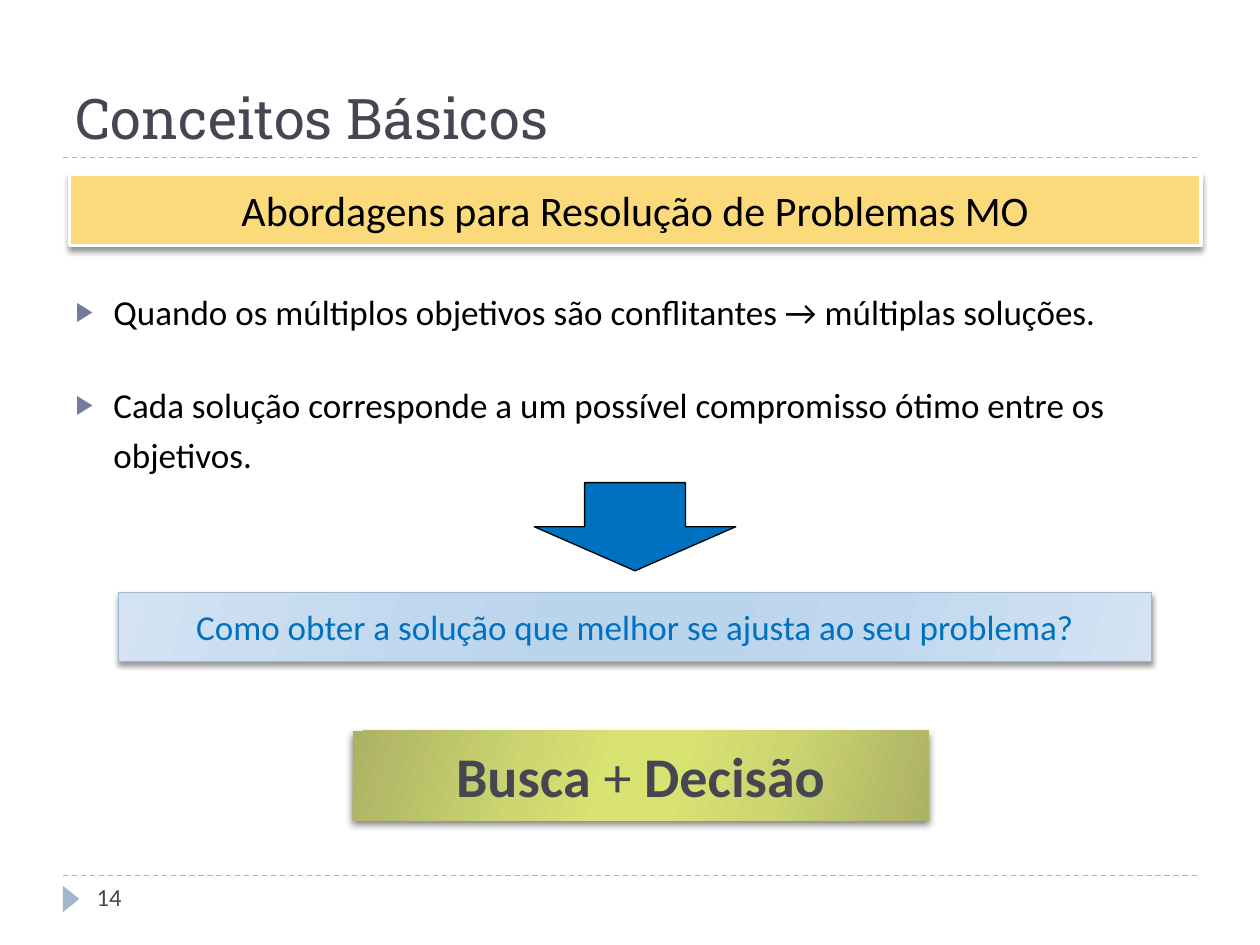
from lxml.etree import SubElement as Sub
from pptx import Presentation
from pptx.dml.color import RGBColor as RGB
from pptx.enum.dml import MSO_LINE as Dash
from pptx.enum.shapes import MSO_CONNECTOR as Conn, MSO_SHAPE as Kind
from pptx.enum.text import MSO_ANCHOR as Anchor, MSO_AUTO_SIZE as Fit, PP_ALIGN as Align
from pptx.oxml.ns import qn
from pptx.util import Pt

BLACK = RGB(0x00, 0x00, 0x00)
WHITE = RGB(0xFF, 0xFF, 0xFF)
SLATE = RGB(0x46, 0x46, 0x53)
STEEL = RGB(0x9F, 0xB8, 0xCD)
INDIGO = RGB(0x72, 0x7C, 0xA3)
BLUE = RGB(0x00, 0x70, 0xC0)
AMBER = RGB(0xFA, 0xDA, 0x7A)
SKY = RGB(0xD3, 0xE3, 0xF2), RGB(0xC0, 0xD8, 0xEE), RGB(0xBA, 0xD4, 0xEC)
LIME = RGB(0xAC, 0xB2, 0x64), RGB(0xCC, 0xD5, 0x70), RGB(0xD9, 0xE3, 0x71)
STOPS = (0, 0), (30, 1), (45, 2), (55, 2), (73, 1), (100, 0)
SANS = "Calibri"
SLAB = "Roboto Slab"


def place(shape, box):
    shape.left, shape.top, shape.width, shape.height = map(Pt, box)


def style(para, size, color, face=SANS):
    for run in para.runs:
        run.font.size = Pt(size)
        run.font.name = face
        run.font.color.rgb = color


def flat(slide, kind, box, fill=None, line=None, width=0.75):
    shape = slide.shapes.add_shape(kind, *map(Pt, box))
    shape.shadow.inherit = False
    if fill is not None:
        shape.fill.solid()
        shape.fill.fore_color.rgb = fill
    if line is None:
        shape.line.fill.background()
    else:
        shape.line.color.rgb = line
        shape.line.width = Pt(width)
    return shape


def blend(shape, tones):
    shape.fill.gradient()
    grad = shape._element.spPr.find(qn("a:gradFill"))
    for child in list(grad):
        grad.remove(child)
    stops = Sub(grad, qn("a:gsLst"))
    for spot, tone in STOPS:
        stop = Sub(stops, qn("a:gs"), pos=str(spot * 1000))
        Sub(stop, qn("a:srgbClr"), val=str(tones[tone]))
    Sub(grad, qn("a:lin"), ang=str(16 * 60000), scaled="0")


def shade(shape, alpha, blur):
    effects = shape._element.spPr.find(qn("a:effectLst"))
    outer = Sub(effects, qn("a:outerShdw"), blurRad=str(Pt(blur)), dist=str(Pt(2)),
                dir=str(90 * 60000), algn="ctr", rotWithShape="0")
    color = Sub(outer, qn("a:srgbClr"), val=str(BLACK))
    Sub(color, qn("a:alpha"), val=str(alpha * 1000))


def label(shape, text, size, color):
    frame = shape.text_frame
    frame.text = text
    frame.word_wrap = True
    frame.vertical_anchor = Anchor.MIDDLE
    para = frame.paragraphs[0]
    para.alignment = Align.CENTER
    style(para, size, color)
    return para


def rule(slide, left, top, width):
    line = slide.shapes.add_connector(Conn.STRAIGHT, Pt(left), Pt(top), Pt(left + width), Pt(top))
    line.line.color.rgb = STEEL
    line.line.width = Pt(0.75)
    line.line.dash_style = Dash.DASH
    Sub(line._element.spPr, qn("a:effectLst"))


def header(slide, box):
    left, top, width, height = box
    rule(slide, left, top + height, width)
    title = slide.shapes.title
    place(title, box)
    frame = title.text_frame
    frame.text = "Conceitos Básicos"
    frame.auto_size = Fit.NONE
    frame.vertical_anchor = Anchor.BOTTOM
    para = frame.paragraphs[0]
    para.alignment = Align.LEFT
    style(para, 32, SLATE, SLAB)


def bullets(slide, box, items):
    body = slide.placeholders[1]
    place(body, box)
    frame = body.text_frame
    frame.text = "\n".join(items)
    frame.auto_size = Fit.NONE
    for order, para in enumerate(frame.paragraphs):
        para.line_spacing = 1.2
        para.space_before = Pt(12 if order else 0)
        para.space_after = Pt(12)
        props = para._p.get_or_add_pPr()
        props.set("marL", str(Pt(21.6)))
        props.set("indent", str(Pt(-21.6)))
        Sub(Sub(props, qn("a:buClr")), qn("a:srgbClr"), val=str(INDIGO))
        Sub(props, qn("a:buSzPct"), val="76000")
        Sub(props, qn("a:buChar"), char="▶")
        style(para, 20, BLACK)


def banner(slide, box):
    shape = flat(slide, Kind.RECTANGLE, box, AMBER, WHITE, 2)
    shade(shape, 40, 3)
    label(shape, "Abordagens para Resolução de Problemas MO", 24, BLACK)


def question(slide, box):
    left, top, width, height = box
    panel = flat(slide, Kind.RECTANGLE, (left, top + height - 39.6, width, 39.6), line=STEEL)
    blend(panel, SKY)
    shade(panel, 40, 3)
    label(panel, "Como obter a solução que melhor se ajusta ao seu problema?", 20, BLUE)
    flat(slide, Kind.DOWN_ARROW, (left + (width - 115.2) / 2, top, 115.2, 50.4), BLUE, BLACK)


def answer(slide, box):
    shape = flat(slide, Kind.RECTANGLE, box)
    blend(shape, LIME)
    shade(shape, 50, 4)
    para = label(shape, "Busca ", 32, SLATE)
    for text in ("+", " Decisão"):
        para.add_run().text = text
    style(para, 32, SLATE)
    for run in para.runs:
        run.font.bold = run.text != "+"


def footer(slide, box):
    left, top, width, height = box
    rule(slide, left, top, width)
    mark = flat(slide, Kind.ISOSCELES_TRIANGLE, (left - 2.9, top + 8.6, 15.1, 9.4), STEEL)
    mark.rotation = 90
    note = slide.shapes.add_textbox(Pt(left + 12.2), Pt(top), Pt(156.2), Pt(height))
    note.text_frame.word_wrap = True
    note.text_frame.text = "14"
    style(note.text_frame.paragraphs[0], 14, SLATE)


def main():
    deck = Presentation()
    deck.slide_width, deck.slide_height = Pt(720), Pt(540)
    slide = deck.slides.add_slide(deck.slide_layouts[1])
    header(slide, (36, 12.2, 648, 77.8))
    bullets(slide, (36, 157.7, 648, 129.6), (
        "Quando os múltiplos objetivos são conflitantes → múltiplas soluções.",
        "Cada solução corresponde a um possível compromisso ótimo entre os objetivos.",
    ))
    banner(slide, (39.6, 99.4, 646.6, 41))
    question(slide, (67.7, 275.8, 590.4, 102.2))
    answer(slide, (201.6, 417.6, 329, 51.1))
    footer(slide, (36, 500.4, 648, 28.8))
    deck.save("out.pptx")


if __name__ == "__main__":
    main()
